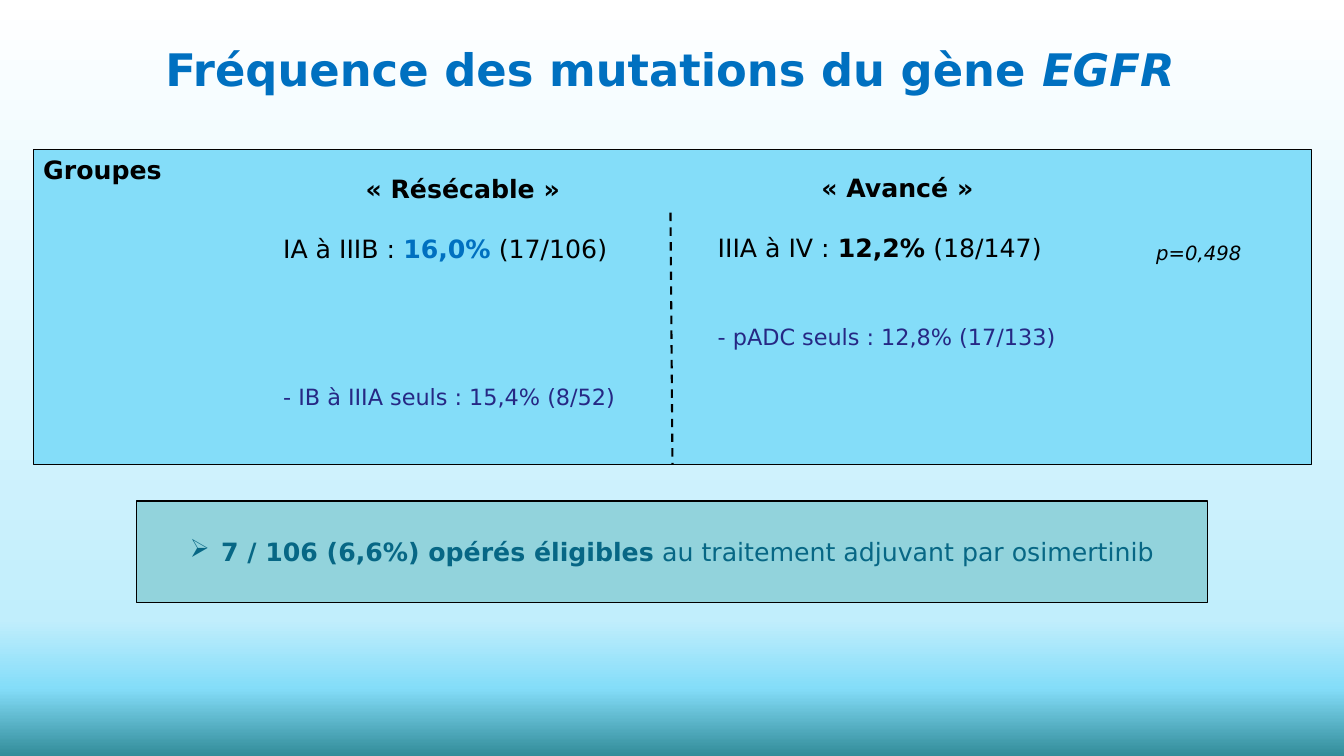
from dataclasses import dataclass

from lxml import etree
from pptx import Presentation
from pptx.dml.color import RGBColor
from pptx.enum.dml import MSO_LINE
from pptx.enum.shapes import MSO_CONNECTOR, MSO_SHAPE
from pptx.enum.text import MSO_ANCHOR as ANCHOR, MSO_AUTO_SIZE as AUTO, PP_ALIGN as ALIGN
from pptx.oxml.ns import qn
from pptx.util import Inches, Pt


@dataclass(frozen=True)
class Theme:
    """Colours, font and type sizes of the slide."""
    font: str = "DejaVu Sans"
    black: str = "000000"
    blue: str = "0070C0"
    indigo: str = "262884"
    teal: str = "076785"
    panel: str = "84DDF9"
    banner: str = "92D3DC"
    backdrop: tuple = ((0, "FFFFFF"), (82, "C1EEFC"), (91, "84DDF9"), (100, "328C99"))
    title: int = 32
    body: int = 18
    detail: int = 16
    note: int = 14


T = Theme()


def rgb(value):
    """Turn a hex string into a colour."""
    return RGBColor.from_string(value)


def set_background(s):
    """Fill the background with the vertical gradient."""
    fill = s.background.fill
    fill.gradient()
    grad = s.background._cSld.find(".//" + qn("a:gradFill"))
    stops = grad.find(qn("a:gsLst"))
    for stop in list(stops):
        stops.remove(stop)
    for pos, color in T.backdrop:
        stop = etree.SubElement(stops, qn("a:gs"), pos=str(pos * 1000))
        etree.SubElement(stop, qn("a:srgbClr"), val=color)
    grad.find(qn("a:lin")).set("ang", "5400000")


def write(p, runs, size=T.body, color=T.black, align=ALIGN.LEFT):
    """Write (text, run formats) pairs into a paragraph of one font."""
    p.alignment = align
    p.font.name, p.font.size = T.font, Pt(size)
    p.font.color.rgb = rgb(color)
    for text, formats in runs:
        r = p.add_run()
        r.text = text
        r.font.bold = formats.get("bold")
        r.font.italic = formats.get("italic")
        if "color" in formats:
            r.font.color.rgb = rgb(formats["color"])


def add_title(s, runs):
    """Place and write the title placeholder."""
    sp = s.shapes.title
    sp.left, sp.top, sp.width, sp.height = map(Inches, (1.44, 0.22, 10.41, 0.99))
    tf = sp.text_frame
    tf.auto_size, tf.vertical_anchor = AUTO.NONE, ANCHOR.MIDDLE
    p = tf.paragraphs[0]
    p.line_spacing = 0.9
    write(p, runs, T.title, T.blue, ALIGN.CENTER)


def add_panel(s, box, color, anchor):
    """Add a thinly outlined rectangle."""
    sp = s.shapes.add_shape(MSO_SHAPE.RECTANGLE, *map(Inches, box))
    sp.shadow.inherit = False
    sp.fill.solid()
    sp.fill.fore_color.rgb = rgb(color)
    sp.line.color.rgb = rgb(T.black)
    sp.line.width = Pt(0.75)
    sp.text_frame.word_wrap = True
    sp.text_frame.vertical_anchor = anchor
    return sp


def add_text(s, box):
    """Add a wrapping text box and return its frame."""
    tf = s.shapes.add_textbox(*map(Inches, box)).text_frame
    tf.word_wrap = True
    return tf


def add_group(s, left, top, name, stages, rate, count, color=T.black):
    """Add a group heading with its mutation rate below."""
    tf = add_text(s, (left, top, 3.76, 1.01))
    write(tf.paragraphs[0], [(f"«\u00a0{name}\u00a0»", {"bold": True})], align=ALIGN.CENTER)
    p = tf.add_paragraph()
    p.space_before = Pt(21)
    write(p, [(f"{stages} : ", {}), (rate, {"bold": True, "color": color}), (f" ({count})", {})])


def add_bullet(p, char):
    """Give a paragraph a hanging bullet."""
    indent = Inches(0.31)
    pPr = p._p.get_or_add_pPr()
    pPr.set("marL", str(indent))
    pPr.set("indent", str(-indent))
    bullet = etree.Element(qn("a:buChar"), char=char)
    pPr.insert(0, bullet)


def add_divider(s, start, panel):
    """Draw the dashed divider down to the panel's bottom side."""
    x, y = map(Inches, start)
    line = s.shapes.add_connector(MSO_CONNECTOR.STRAIGHT, x, y, x, y)
    line.end_connect(panel, 2)
    line.line.color.rgb = rgb(T.black)
    line.line.width = Pt(1.5)
    line.line.dash_style = MSO_LINE.DASH
    etree.SubElement(line._element.spPr, qn("a:effectLst"))


def main():
    """Build the slide and save it."""
    prs = Presentation()
    prs.slide_width, prs.slide_height = Inches(13.33), Inches(7.5)
    s = prs.slides.add_slide(prs.slide_layouts[5])
    set_background(s)
    add_title(s, [("Fréquence des mutations du gène ", {"bold": True}),
                  ("EGFR", {"bold": True, "italic": True})])

    groups = add_panel(s, (0.33, 1.48, 12.68, 3.13), T.panel, ANCHOR.TOP)
    write(groups.text_frame.paragraphs[0], [("Groupes", {"bold": True})])
    add_group(s, 2.71, 1.67, "Résécable", "IA à IIIB", "16,0%", "17/106", T.blue)
    add_group(s, 7.02, 1.66, "Avancé", "IIIA à IV", "12,2%", "18/147")
    for left, top, text in ((2.71, 3.75, "- IB à IIIA seuls : 15,4% (8/52)"),
                            (7.02, 3.16, "- pADC seuls : 12,8% (17/133)")):
        tf = add_text(s, (left, top, 3.85, 0.37))
        write(tf.paragraphs[0], [(text, {})], T.detail, T.indigo)
    tf = add_text(s, (11.14, 2.34, 1.5, 0.34))
    write(tf.paragraphs[0], [("p=0,498", {"italic": True})], T.note, align=ALIGN.CENTER)
    add_divider(s, (6.65, 2.11), groups)

    banner = add_panel(s, (1.35, 4.97, 10.63, 1.01), T.banner, ANCHOR.MIDDLE)
    p = banner.text_frame.paragraphs[0]
    write(p, [("7 / 106 (6,6%) opérés éligibles", {"bold": True}),
              (" au traitement adjuvant par osimertinib", {})], color=T.teal, align=ALIGN.CENTER)
    add_bullet(p, "➢")
    prs.save("out.pptx")


if __name__ == "__main__":
    main()
